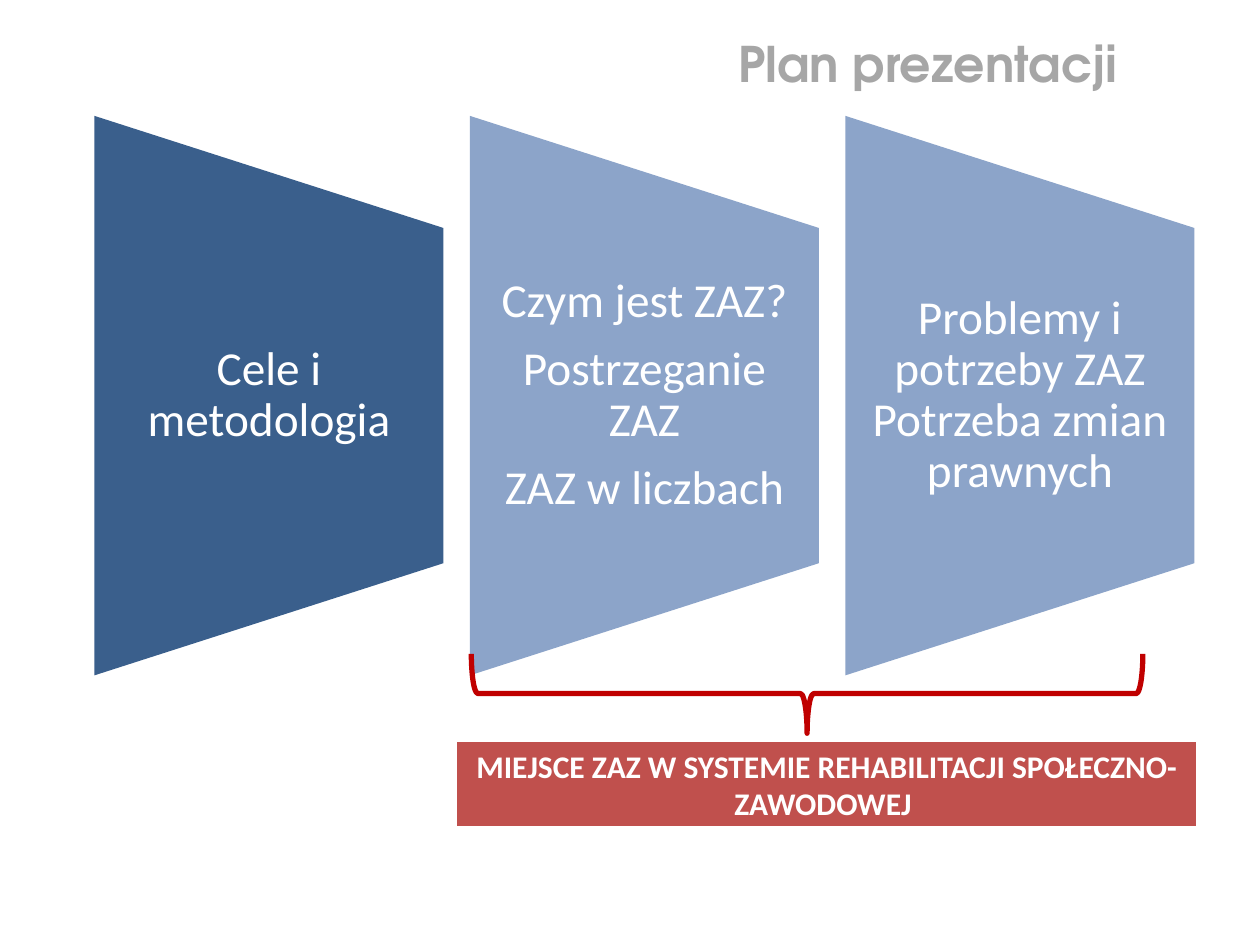
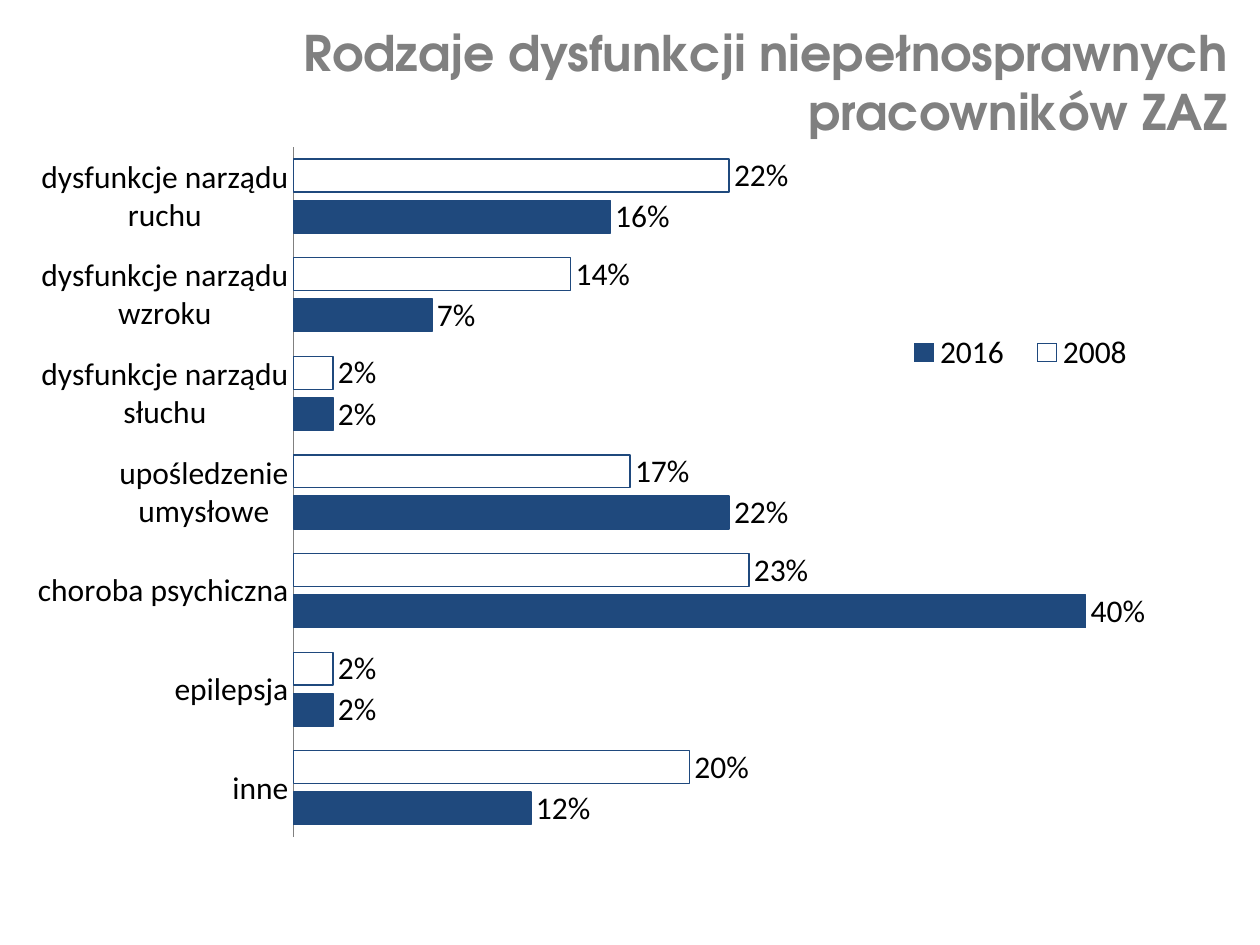
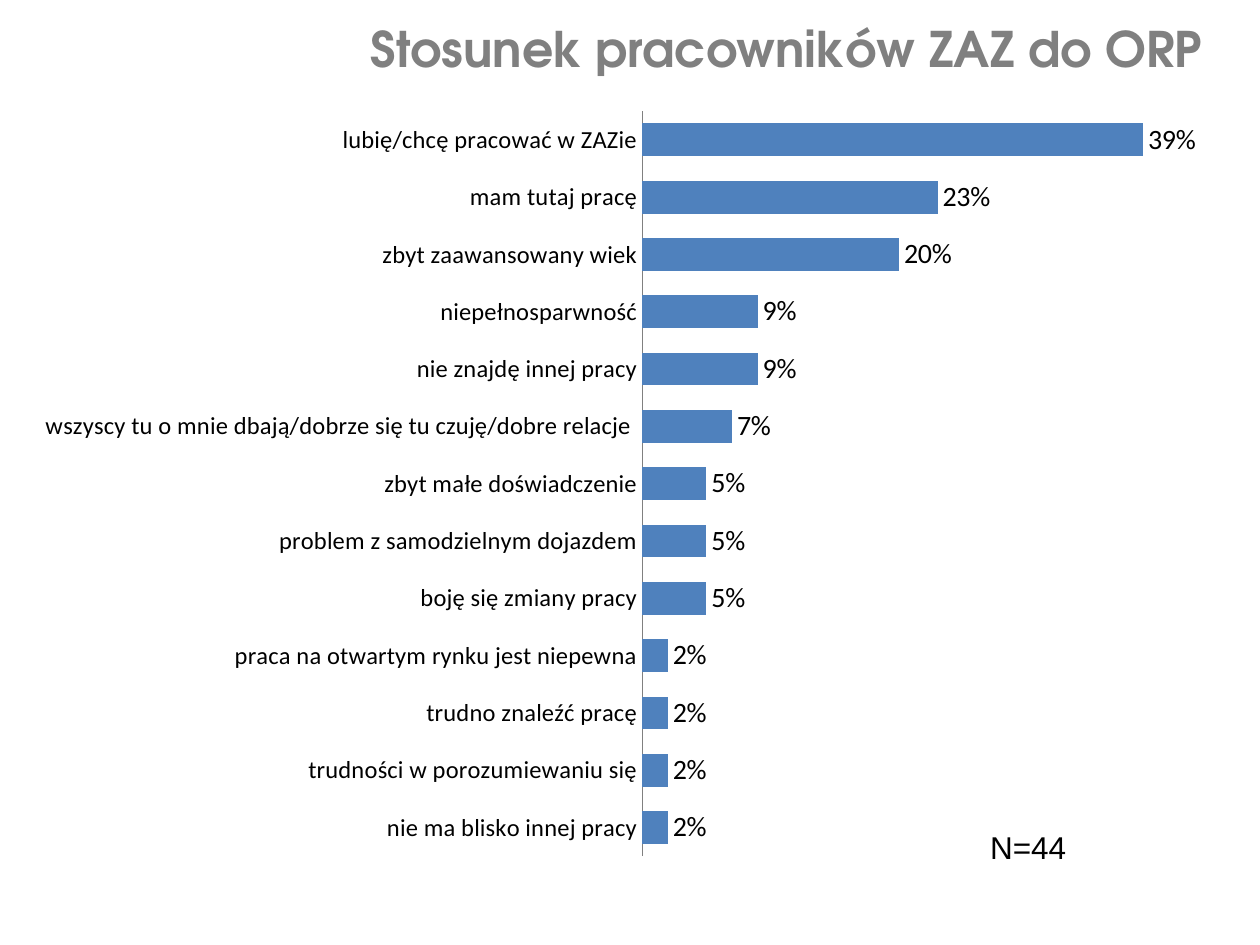
from lxml import etree
from pptx import Presentation
from pptx.chart.data import CategoryChartData
from pptx.dml.color import RGBColor
from pptx.enum import chart as chart_enum, shapes, text
from pptx.oxml import ns
from pptx.util import Inches, Pt

# Shared look
TITLE_FONT, BODY_FONT, NOTE_FONT = "TeX Gyre Adventor", "Calibri", "Arial"
WHITE, BLACK, GRAY, LIGHT_GRAY = "FFFFFF", "000000", "808080", "A6A6A6"
NAVY, BLUE, STEEL, PALE_BLUE = "1F497D", "4F81BD", "3A5F8C", "8CA4C9"
RED, DARK_RED = "C0504D", "C00000"
RIGHT, CENTER, LEFT = text.PP_ALIGN.RIGHT, text.PP_ALIGN.CENTER, text.PP_ALIGN.LEFT

# Plan panels
PANEL_LEFT, PANEL_TOP, PANEL_PITCH = 0.75, 0.92, 2.98
PANEL_WIDTH, PANEL_HEIGHT, PANEL_SLOPE = 2.77, 4.44, 0.89
PANELS = [
    (STEEL, "Cele i metodologia"),
    (PALE_BLUE, "Czym jest ZAZ?\nPostrzeganie ZAZ\nZAZ w liczbach"),
    (PALE_BLUE, "Problemy i potrzeby ZAZ Potrzeba zmian prawnych"),
]

# Chart data
DYSFUNCTIONS = [
    "dysfunkcje narządu ruchu", "dysfunkcje narządu wzroku",
    "dysfunkcje narządu słuchu", "upośledzenie umysłowe",
    "choroba psychiczna", "epilepsja", "inne",
]
DYSFUNCTION_SHARES = {
    "2008": [0.22, 0.14, 0.02, 0.17, 0.23, 0.02, 0.2],
    "2016": [0.16, 0.07, 0.02, 0.22, 0.4, 0.02, 0.12],
}
REASONS = {
    "lubię/chcę pracować w ZAZie": 0.39,
    "mam tutaj pracę": 0.23,
    "zbyt zaawansowany wiek": 0.2,
    "niepełnosparwność": 0.09,
    "nie znajdę innej pracy": 0.09,
    "wszyscy tu o mnie dbają/dobrze się tu czuję/dobre relacje ": 0.07,
    "zbyt małe doświadczenie": 0.05,
    "problem z samodzielnym dojazdem": 0.05,
    "boję się zmiany pracy": 0.05,
    "praca na otwartym rynku jest niepewna": 0.02,
    "trudno znaleźć pracę": 0.02,
    "trudności w porozumiewaniu się": 0.02,
    "nie ma blisko innej pracy": 0.02,
}


def color(hex_value):
    return RGBColor.from_string(hex_value)


def paint(item, fill, line=None, width=0.75):
    """Fill and outline a shape or a chart series format."""
    if fill:
        item.fill.solid()
        item.fill.fore_color.rgb = color(fill)
    else:
        item.fill.background()
    if line:
        item.line.color.rgb = color(line)
        item.line.width = Pt(width)
    else:
        item.line.fill.background()


def set_font(font, size, name=BODY_FONT, hex_value=BLACK, bold=False):
    font.size, font.name, font.bold = Pt(size), name, bold
    font.color.rgb = color(hex_value)


def write(shape, content, align, size, name, hex_value, bold=False):
    frame = shape.text_frame
    frame.word_wrap = True
    frame.text = content
    for paragraph in frame.paragraphs:
        paragraph.alignment = align
        for run in paragraph.runs:
            set_font(run.font, size, name, hex_value, bold)
    return frame


def add_text(slide, box, content, align, size, name, hex_value, bold=False):
    shape = slide.shapes.add_textbox(*map(Inches, box))
    write(shape, content, align, size, name, hex_value, bold)


def add_title(slide, box, content, hex_value=GRAY):
    add_text(slide, box, content, RIGHT, 28, TITLE_FONT, hex_value, True)


def add_preset(slide, kind, box, fill, line):
    shape = slide.shapes.add_shape(kind, *map(Inches, box))
    shape.shadow.inherit = False
    paint(shape, fill, line, 3)
    return shape


def add_panel(slide, left, fill, content):
    """Trapezoid that narrows to the right, with centred text."""
    right, bottom = left + PANEL_WIDTH, PANEL_TOP + PANEL_HEIGHT
    builder = slide.shapes.build_freeform(Inches(left), Inches(bottom), 1.0)
    corners = [(left, PANEL_TOP), (right, PANEL_TOP + PANEL_SLOPE),
               (right, bottom - PANEL_SLOPE)]
    builder.add_line_segments([(Inches(x), Inches(y)) for x, y in corners])
    panel = builder.convert_to_shape()
    panel.shadow.inherit = False
    paint(panel, fill)
    frame = write(panel, content, CENTER, 27, BODY_FONT, WHITE)
    frame.vertical_anchor = text.MSO_ANCHOR.MIDDLE
    frame.margin_left = frame.margin_right = Inches(0.19)
    frame.margin_top = frame.margin_bottom = Inches(PANEL_SLOPE)
    for paragraph in frame.paragraphs:
        paragraph.line_spacing = 0.9
        paragraph.space_after = Pt(9.45)


def set_layout(element, bounds, inner=False):
    """Place a plot area or legend by fractions of the chart."""
    for old in element.findall(ns.qn("c:layout")):
        element.remove(old)
    layout = etree.Element(ns.qn("c:layout"))
    manual = etree.SubElement(layout, ns.qn("c:manualLayout"))
    settings = [("layoutTarget", "inner")] if inner else []
    settings += [("xMode", "edge"), ("yMode", "edge"), *zip("xywh", bounds)]
    for tag, value in settings:
        etree.SubElement(manual, ns.qn("c:" + tag)).set("val", str(value))
    if inner:
        element.insert(0, layout)
    else:
        element.find(ns.qn("c:legendPos")).addnext(layout)


def add_bar_chart(slide, box, categories, series, styles, size, label_size,
                  number_format, plot_bounds):
    data = CategoryChartData(number_format=number_format)
    data.categories = categories
    for name, values in series.items():
        data.add_series(name, values)
    chart = slide.shapes.add_chart(
        chart_enum.XL_CHART_TYPE.BAR_CLUSTERED, *map(Inches, box), data).chart
    chart.has_title = chart.has_legend = False
    set_font(chart.font, size)
    set_layout(chart._chartSpace.chart.plotArea, plot_bounds, inner=True)

    # Axes
    axis = chart.category_axis
    axis.reverse_order = True
    axis.major_tick_mark = chart_enum.XL_TICK_MARK.NONE
    axis.format.line.color.rgb = color(GRAY)
    axis.format.line.width = Pt(0.75)
    set_font(axis.tick_labels.font, label_size)
    value_axis = chart.value_axis
    value_axis.minimum_scale, value_axis.maximum_scale = 0, 0.45
    value_axis.has_major_gridlines = False
    value_axis.visible = False

    # Bars and their labels
    plot = chart.plots[0]
    plot.gap_width, plot.overlap = 75, -25
    plot.vary_by_categories = False
    for bars, (fill, line) in zip(plot.series, styles):
        bars.invert_if_negative = False
        paint(bars.format, fill, line)
        labels = bars.data_labels
        labels.show_value = True
        labels.number_format = number_format
        labels.number_format_is_linked = False
        labels.position = chart_enum.XL_LABEL_POSITION.OUTSIDE_END
        set_font(labels.font, size)
    return chart


def add_legend(chart, bounds):
    chart.has_legend = True
    chart.legend.position = chart_enum.XL_LEGEND_POSITION.BOTTOM
    chart.legend.include_in_layout = False
    set_font(chart.legend.font, 18)
    set_layout(chart.legend._element, bounds)


def build_plan(slide):
    add_title(slide, (5.76, 0.22, 3.31, 0.57), "Plan prezentacji ", LIGHT_GRAY)
    for index, (fill, content) in enumerate(PANELS):
        add_panel(slide, PANEL_LEFT + index * PANEL_PITCH, fill, content)
    banner = add_preset(slide, shapes.MSO_SHAPE.RECTANGLE,
                        (3.61, 5.87, 5.9, 0.71), RED, WHITE)
    write(banner, "MIEJSCE ZAZ W SYSTEMIE REHABILITACJI SPOŁECZNO-ZAWODOWEJ ",
          CENTER, 18, BODY_FONT, WHITE, True)
    brace = add_preset(slide, shapes.MSO_SHAPE.RIGHT_BRACE,
                       (6.09, 2.84, 0.63, 5.33), None, DARK_RED)
    brace.rotation = 90


def build_dysfunctions(slide):
    chart = add_bar_chart(
        slide, (0.28, 0.99, 9.31, 5.83), DYSFUNCTIONS, DYSFUNCTION_SHARES,
        [(WHITE, NAVY), (NAVY, NAVY)], 18, 18, "0%", (0.22, 0.03, 0.76, 0.94))
    add_legend(chart, (0.73, 0.28, 0.22, 0.06))
    add_title(slide, (2.01, 0.13, 7.83, 1.04),
              "Rodzaje dysfunkcji niepełnosprawnych pracowników ZAZ")


def build_attitudes(slide):
    add_bar_chart(
        slide, (0.12, 0.76, 9.76, 6.16), list(REASONS),
        {"Series 1": list(REASONS.values())}, [(BLUE, None)], 16, 14,
        "###0%", (0.51, 0.02, 0.47, 0.96))
    add_text(slide, (7.76, 6.52, 1.65, 0.4), "N=44", LEFT, 18, NOTE_FONT, BLACK)
    add_title(slide, (-0.28, 0.1, 9.92, 0.57), "Stosunek pracowników ZAZ do ORP")


def main():
    presentation = Presentation()
    presentation.slide_width, presentation.slide_height = Inches(10), Inches(7.5)
    for build in (build_plan, build_dysfunctions, build_attitudes):
        build(presentation.slides.add_slide(presentation.slide_layouts[6]))
    presentation.save("out.pptx")


if __name__ == "__main__":
    main()
